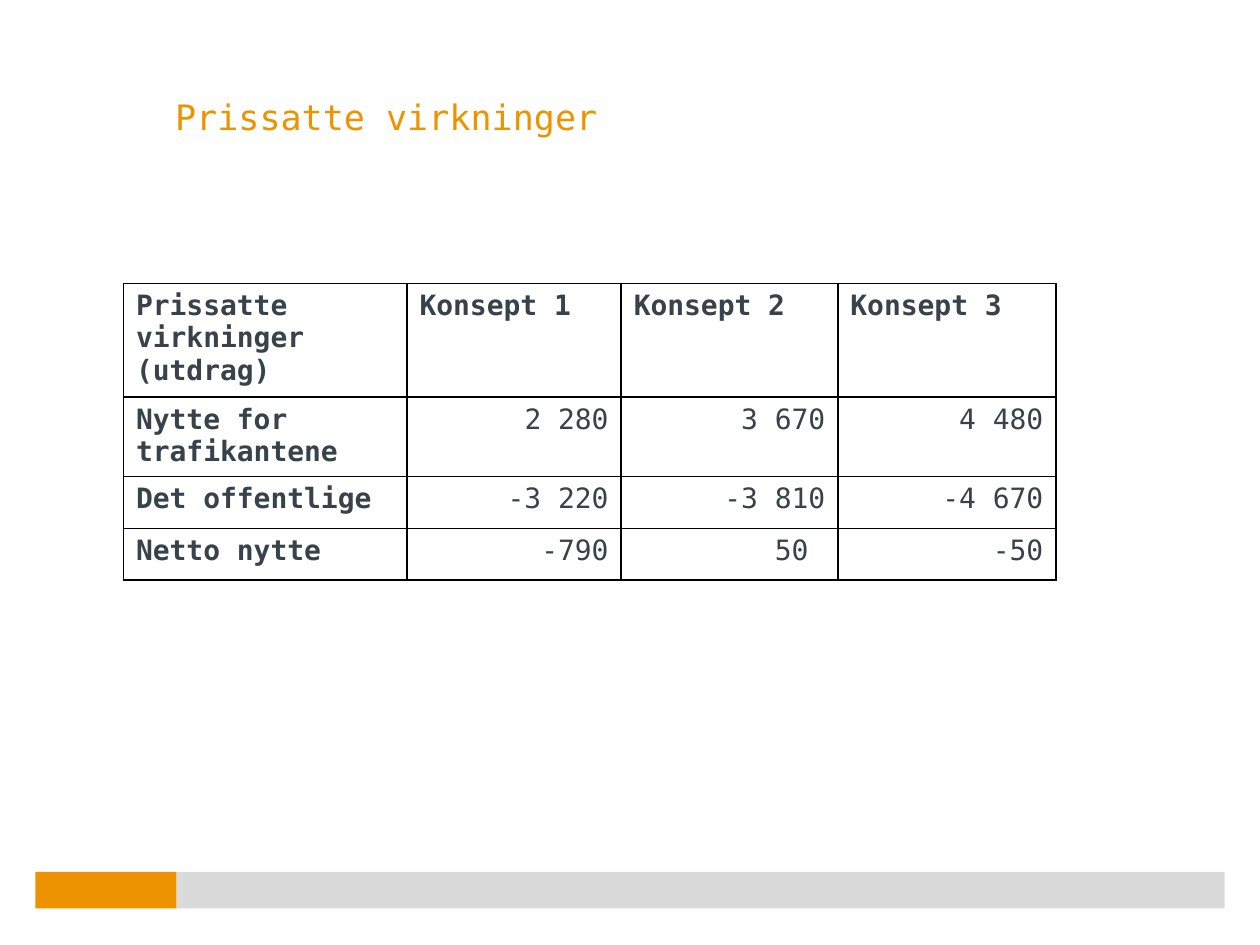
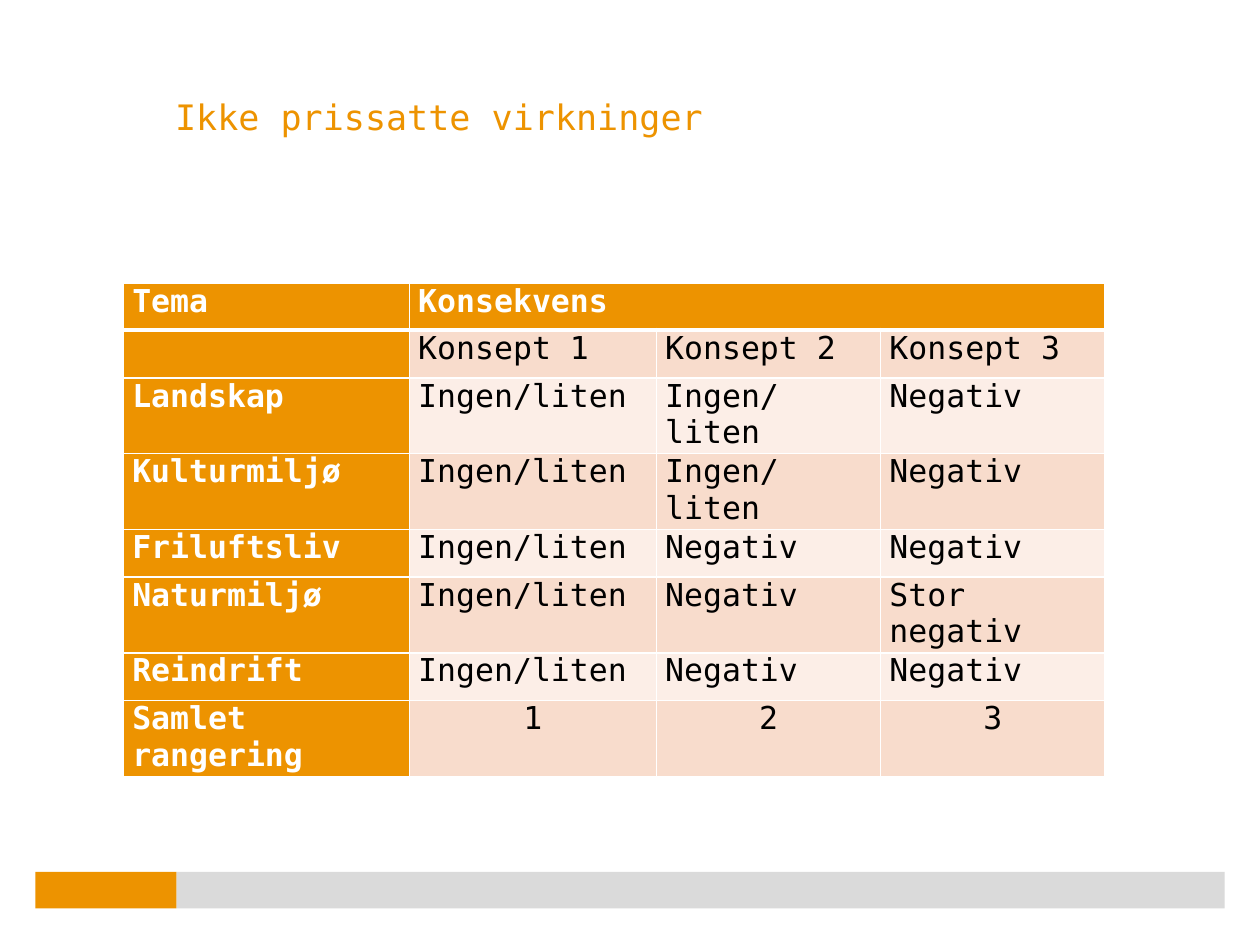
from lxml import etree
from pptx import Presentation
from pptx.dml.color import RGBColor
from pptx.enum.shapes import MSO_SHAPE
from pptx.enum.text import PP_ALIGN
from pptx.oxml.ns import qn
from pptx.util import Inches, Pt

RECTANGLE = MSO_SHAPE.RECTANGLE
LEFT, CENTER, RIGHT = PP_ALIGN.LEFT, PP_ALIGN.CENTER, PP_ALIGN.RIGHT

WIDTH, HEIGHT = 10, 7.5
FONT = "DejaVu Sans Mono"
ORANGE, GREY, SLATE = "ED9300", "DADADA", "37424A"
BLACK, WHITE = "000000", "FFFFFF"
BANDS = ("F8DCCC", "FCEEE7")
TABLE_LEFT, TABLE_TOP = 0.98, 2.25
FOOTER_LEFT, FOOTER_SPLIT, FOOTER_RIGHT = 0.28, 1.4, WIDTH - 0.28
FOOTER_TOP, FOOTER_HEIGHT = 6.92, 0.29
CONCEPTS = ["Konsept 1", "Konsept 2", "Konsept 3"]
LOW, NEGATIVE = "Ingen/liten", "Negativ"

PRICED = {
    "title": "Prissatte virkninger",
    "columns": [2.25, 1.7, 1.72, 1.73],
    "heights": [0.87, 0.61, 0.41, 0.41],
    "margins": (0.1, 0.05),
    "size": 16,
    "border": BLACK,
    "rows": [
        ["Prissatte virkninger\n(utdrag)", *CONCEPTS],
        ["Nytte for trafikantene", "2 280", "3 670", "4 480"],
        ["Det offentlige", "-3 220", "-3 810", "-4 670"],
        ["Netto nytte", "-790", "50 ", "-50"],
    ],
}
UNPRICED = {
    "title": "Ikke prissatte virkninger",
    "columns": [2.27, 1.96, 1.78, 1.78],
    "heights": [0.37, 0.38, 0.58, 0.58, 0.38, 0.58, 0.38, 0.57],
    "margins": (0.07, 0),
    "size": 18,
    "border": WHITE,
    "rows": [
        ["Tema", "Konsekvens", "", ""],
        ["", *CONCEPTS],
        ["Landskap", LOW, LOW, NEGATIVE],
        ["Kulturmiljø", LOW, LOW, NEGATIVE],
        ["Friluftsliv", LOW, NEGATIVE, NEGATIVE],
        ["Naturmiljø", LOW, NEGATIVE, "Stor negativ"],
        ["Reindrift", LOW, NEGATIVE, NEGATIVE],
        ["Samlet rangering", "1", "2", "3"],
    ],
}


def color(value):
    return RGBColor.from_string(value)


def apply(target, values):
    for name, value in values.items():
        setattr(target, name, value)


def format_paragraph(paragraph, size, text_color, bold=False, **layout):
    apply(paragraph, layout)
    for run in paragraph.runs:
        apply(run.font, {"name": FONT, "size": Pt(size), "bold": bold})
        run.font.color.rgb = color(text_color)


def add_band(slide, left, right, fill):
    band = slide.shapes.add_shape(
        RECTANGLE, Inches(left), Inches(FOOTER_TOP),
        Inches(right - left), Inches(FOOTER_HEIGHT))
    band.shadow.inherit = False
    band.fill.solid()
    band.fill.fore_color.rgb = color(fill)
    band.line.fill.background()


def add_base(presentation, title):
    slide = presentation.slides.add_slide(presentation.slide_layouts[6])
    add_band(slide, FOOTER_SPLIT, FOOTER_RIGHT, GREY)
    add_band(slide, FOOTER_LEFT, FOOTER_SPLIT, ORANGE)
    box = slide.shapes.add_textbox(
        Inches(1.39), Inches(0.76), Inches(6.23), Inches(0.39))
    frame = box.text_frame
    apply(frame, {"word_wrap": True, "margin_left": 0, "margin_right": 0,
                  "margin_top": 0, "margin_bottom": 0, "text": title})
    format_paragraph(frame.paragraphs[0], 20, ORANGE)
    return slide


def set_borders(cell, line_color, widths):
    properties = cell._tc.get_or_add_tcPr()
    for side in ("L", "R", "T", "B"):
        line = etree.SubElement(properties, qn(f"a:ln{side}"),
                                w=str(Pt(widths.get(side, 1))))
        fill = etree.SubElement(line, qn("a:solidFill"))
        etree.SubElement(fill, qn("a:srgbClr"), val=line_color)


def priced_style(row, column):
    heading = row == 0 or column == 0
    return {"fill": WHITE, "borders": {}, "text": {
        "text_color": SLATE, "bold": heading,
        "alignment": LEFT if heading else RIGHT}}


def unpriced_style(row, column):
    heading = row == 0 or column == 0
    last = row == len(UNPRICED["rows"]) - 1
    text = {"text_color": WHITE if heading else BLACK, "bold": heading,
            "alignment": CENTER if last and not heading else LEFT}
    if heading or row == 1 or last:
        text["space_after"] = Pt(6)
    return {"fill": ORANGE if heading else BANDS[(row - 1) % 2],
            "borders": {0: {"B": 3}, 1: {"T": 3}}.get(row, {}),
            "text": text}


def add_table(slide, content, style_for):
    rows, columns, heights = (content[key] for key in ("rows", "columns", "heights"))
    table = slide.shapes.add_table(
        len(rows), len(columns), Inches(TABLE_LEFT), Inches(TABLE_TOP),
        Inches(sum(columns)), Inches(sum(heights))).table
    apply(table, {"first_row": False, "horz_banding": False})
    for column, width in zip(table.columns, columns):
        column.width = Inches(width)
    for row, height in zip(table.rows, heights):
        row.height = Inches(height)
    side, end = (Inches(margin) for margin in content["margins"])
    for row_index, row in enumerate(rows):
        for column_index, text in enumerate(row):
            cell = table.cell(row_index, column_index)
            style = style_for(row_index, column_index)
            apply(cell, {"text": text, "margin_left": side, "margin_right": side,
                         "margin_top": end, "margin_bottom": end})
            set_borders(cell, content["border"], style["borders"])
            cell.fill.solid()
            cell.fill.fore_color.rgb = color(style["fill"])
            for paragraph in cell.text_frame.paragraphs:
                format_paragraph(paragraph, content["size"], **style["text"])
    return table


def main():
    presentation = Presentation()
    apply(presentation, {"slide_width": Inches(WIDTH), "slide_height": Inches(HEIGHT)})
    add_table(add_base(presentation, PRICED["title"]), PRICED, priced_style)
    table = add_table(add_base(presentation, UNPRICED["title"]), UNPRICED, unpriced_style)
    table.cell(0, 1).merge(table.cell(0, 3))
    presentation.save("out.pptx")


if __name__ == "__main__":
    main()
